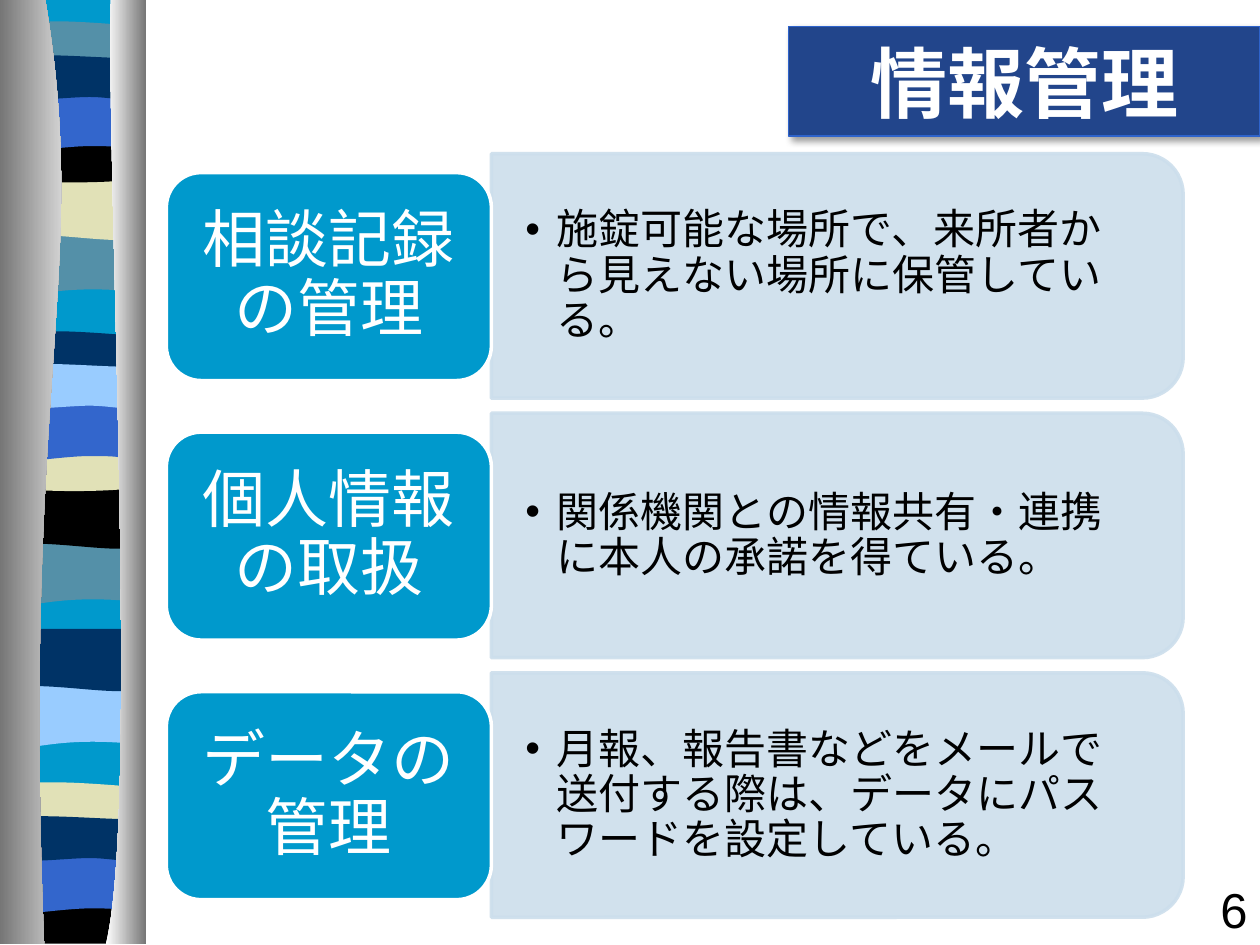
"""Build the information management slide with its wavy side band."""
from lxml import etree
from pptx import Presentation
from pptx.dml.color import RGBColor
from pptx.enum.shapes import MSO_SHAPE
from pptx.enum.text import MSO_ANCHOR, MSO_AUTO_SIZE, PP_ALIGN
from pptx.oxml import parse_xml
from pptx.oxml.ns import nsdecls, qn
from pptx.util import Inches, Pt

ROUND = MSO_SHAPE.ROUNDED_RECTANGLE
TAB = MSO_SHAPE.ROUND_2_SAME_RECTANGLE
MIDDLE, TOP = MSO_ANCHOR.MIDDLE, MSO_ANCHOR.TOP
LEFT, CENTER, RIGHT = PP_ALIGN.LEFT, PP_ALIGN.CENTER, PP_ALIGN.RIGHT

TITLE = "情報管理"
NUMBER = "6"
ROWS = [
    ("相談記録の管理", "施錠可能な場所で、来所者から見えない場所に保管している。"),
    ("個人情報の取扱", "関係機関との情報共有・連携に本人の承諾を得ている。"),
    ("データの管理", "月報、報告書などをメールで送付する際は、データにパスワードを設定している。"),
]
SANS, CJK = "Arial", "Noto Sans CJK JP"
COLORS = {
    "teal": "0099CC", "slate": "5490A8", "sand": "E1E1B7", "black": "000000",
    "blue": "3366CC", "navy": "003366", "sky": "99CCFF", "white": "FFFFFF",
    "gray": "767676", "pale": "CCDEEC", "title": "22458B", "edge": "2E63CB",
}
WAVES = {
    "swell": [(1.08, 0), (1.08, .47), (.34, .39, .19, .55, 0, .47), (0, 0)],
    "dip": [(1.08, 0), (1.08, .47), (.9, .55, .33, .41, 0, .47), (0, 0)],
    "thin": [(1.08, .05), (1.08, .29), (.9, .34, .18, .34, 0, .29), (0, .05),
             (.07, 0, .24, .01, .42, .01), (.6, .01, .95, .04, 1.08, .05)],
    "bowl": [(1.08, 0), (1.08, .33), (.9, .38, .18, .38, 0, .33), (0, 0),
             (.66, .05, .85, 0, 1.08, 0)],
    "arch": [(1.08, 0), (1.08, .47), (.91, .42, .84, .42, .66, .42),
             (.48, .42, .16, .47, 0, .47), (0, 0)],
    "flow": [(1.08, .05), (1.08, .36), (1.01, .41, .84, .36, .66, .36),
             (.48, .36, .11, .41, 0, .36), (0, .05),
             (.15, 0, .73, .05, .91, .05), (1.09, .05, 1.05, .05, 1.08, .05)],
    "base": [(1.08, 0), (1.08, .37), (0, .37), (0, 0), (.66, .05, .85, 0, 1.08, 0)],
    "back": [(1.08, 0), (1.08, 7.47), (0, 7.47), (0, 0)],
}
BANDS = [
    ("back", 0, "teal"), ("swell", 1.85, "slate"), ("dip", 1.41, "sand"),
    ("thin", .16, "slate"), ("bowl", 1.08, "black"), ("arch", .74, "blue"),
    ("flow", .41, "navy"), ("swell", 4.31, "slate"), ("dip", 3.86, "black"),
    ("thin", 2.62, "navy"), ("bowl", 3.53, "sand"), ("arch", 3.2, "blue"),
    ("flow", 2.86, "sky"), ("swell", 5.44, "sky"), ("dip", 4.99, "navy"),
    ("thin", 6.2, "sand"), ("base", 7.12, "black"), ("arch", 6.79, "blue"),
    ("flow", 6.45, "navy"),
]
DRAPES = [
    ([(.36, 0), (.72, 2.16, .17, 2.96, .35, 7.49), (0, 7.49), (0, 0)],
     "gray", "white"),
    ([(.88, 0), (.84, 1.25, 1.11, 6.46, .84, 7.49), (1.16, 7.49), (1.16, 0)],
     "white", "gray"),
]
PITCH = 2.06


def rgb(name):
    return RGBColor.from_string(COLORS[name])


def outline(shapes, parts, left=0, top=0):
    points = [(Inches(left + x), Inches(top + y))
              for part in parts for x, y in zip(part[::2], part[1::2])]
    pen = shapes.build_freeform(*points[0])
    pen.add_line_segments(points[1:], close=True)
    shape = pen.convert_to_shape()
    shape.shadow.inherit = False
    shape.line.fill.background()
    bend(shape, parts)
    return shape


def bend(shape, parts):
    """Join the three segments of each six-number part into one curve."""
    lines = iter(list(shape._element.iter(qn("a:lnTo"))))
    for part in parts[1:]:
        first = next(lines)
        if len(part) == 6:
            first.tag = qn("a:cubicBezTo")
            for line in (next(lines), next(lines)):
                first.append(line[0])
                line.getparent().remove(line)


def block(shapes, kind, box, fill, line):
    shape = shapes.add_shape(kind, *map(Inches, box))
    shape.shadow.inherit = False
    paint(shape, fill, line, 2)
    return shape


def paint(shape, fill, line, width):
    shape.fill.solid()
    shape.fill.fore_color.rgb = rgb(fill)
    shape.line.color.rgb = rgb(line)
    shape.line.width = Pt(width)


def write(shape, text, size, font, color, align, anchor=MIDDLE, pad=(.1, .05), bold=False):
    frame = shape.text_frame
    frame.text = text
    frame.word_wrap = True
    frame.auto_size = MSO_AUTO_SIZE.NONE
    frame.vertical_anchor = anchor
    frame.margin_left = frame.margin_right = Inches(pad[0])
    frame.margin_top = frame.margin_bottom = Inches(pad[1])
    para = frame.paragraphs[0]
    para.alignment = align
    run = para.runs[0]
    run.font.size, run.font.name, run.font.bold = Pt(size), font, bold
    run.font.color.rgb = rgb(color)
    etree.SubElement(run.font._element, qn("a:ea")).set("typeface", CJK)
    return para


def label(shapes, box, *args, **kwargs):
    return write(shapes.add_textbox(*map(Inches, box)), *args, **kwargs)


def bullet(para):
    props = para._p.get_or_add_pPr()
    props.set("marL", str(Inches(.25)))
    props.set("indent", str(Inches(-.25)))
    etree.SubElement(props, qn("a:buFont")).set("typeface", SANS)
    etree.SubElement(props, qn("a:buChar")).set("char", "•")


def side(shapes):
    for wave, top, color in BANDS:
        band = outline(shapes, WAVES[wave], .05, top)
        band.fill.solid()
        band.fill.fore_color.rgb = rgb(color)
    for parts, *ends in DRAPES:
        drape = outline(shapes, parts)
        drape.fill.gradient()
        drape.fill.gradient_angle = 0
        for stop, color in zip(drape.fill.gradient_stops, ends):
            stop.color.rgb = rgb(color)


def row(shapes, top, name, text):
    wide, high = 5.49, 1.94
    bar = block(shapes, TAB, (3.9 + (wide - high) / 2, top - (wide - high) / 2, high, wide),
                "pale", "pale")
    bar.rotation = 90
    for color in bar._element.spPr.iter(qn("a:srgbClr")):
        etree.SubElement(color, qn("a:alpha")).set("val", "90000")
    para = label(shapes, (3.9, top + .1, 5.4, 1.75), text, 24, CJK, "black", LEFT,
                 pad=(.27, .14))
    para.line_spacing = .9
    bullet(para)
    block(shapes, ROUND, (1.32, top + .15, 2.58, 1.65), "teal", "white")
    para = label(shapes, (1.4, top + .23, 2.42, 1.49), name, 36, SANS, "white", CENTER,
                 pad=(.15, .07))
    para.line_spacing = .9


def head(title):
    title.left, title.top, title.width, title.height = map(Inches, (6.26, .21, 3.74, .87))
    paint(title, "title", "edge", .75)
    write(title, TITLE, 44, CJK, "white", CENTER, bold=True)
    title._element.spPr.append(parse_xml(
        f'<a:effectLst {nsdecls("a")}><a:outerShdw blurRad="{Pt(4)}" dist="{Pt(3)}" '
        'dir="2700000" algn="tl" rotWithShape="0"><a:srgbClr val="000000">'
        '<a:alpha val="38000"/></a:srgbClr></a:outerShdw></a:effectLst>'))


def main():
    deck = Presentation()
    deck.slide_width, deck.slide_height = Inches(10), Inches(7.5)
    slide = deck.slides.add_slide(deck.slide_layouts[5])
    shapes = slide.shapes
    side(shapes)
    for index, (name, text) in enumerate(ROWS):
        row(shapes, 1.22 + index * PITCH, name, text)
    head(shapes.title)
    label(shapes, (7.92, 6.93, 2.08, .5), NUMBER, 28, SANS, "black", RIGHT, TOP)
    deck.save("out.pptx")


if __name__ == "__main__":
    main()
